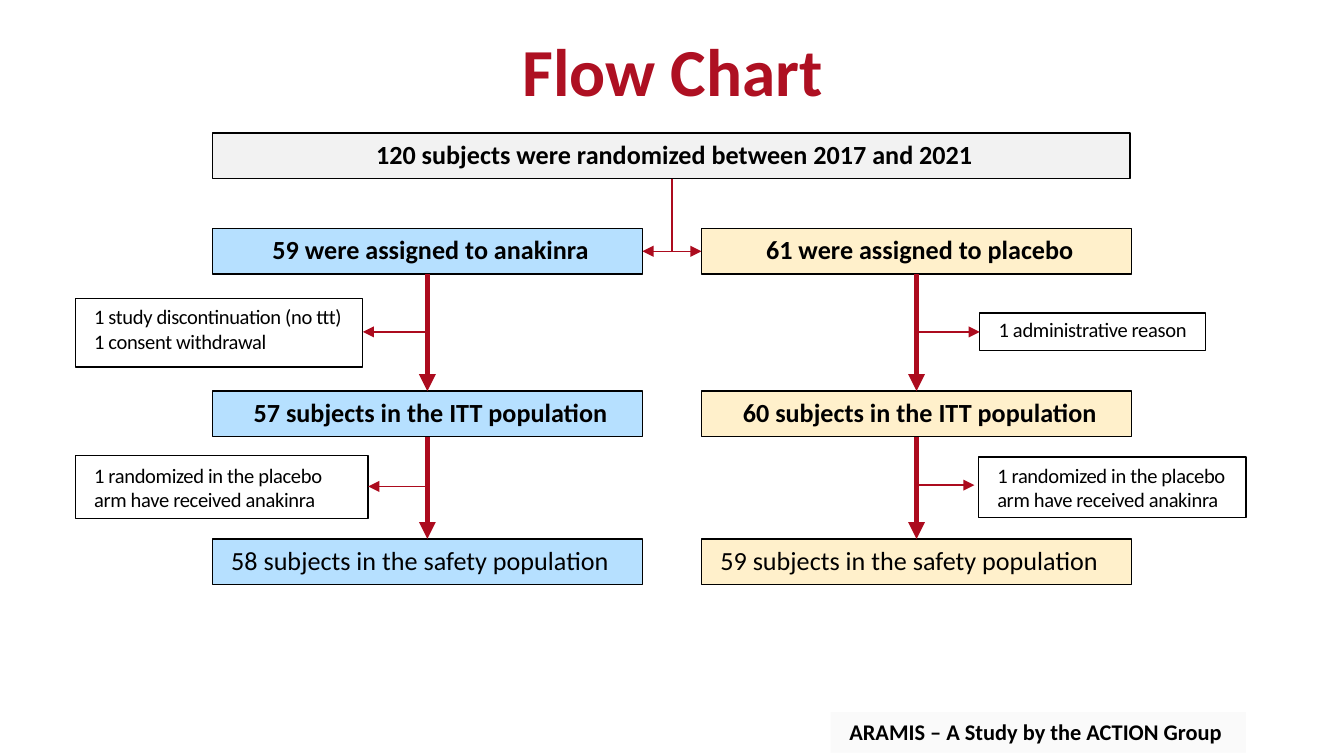
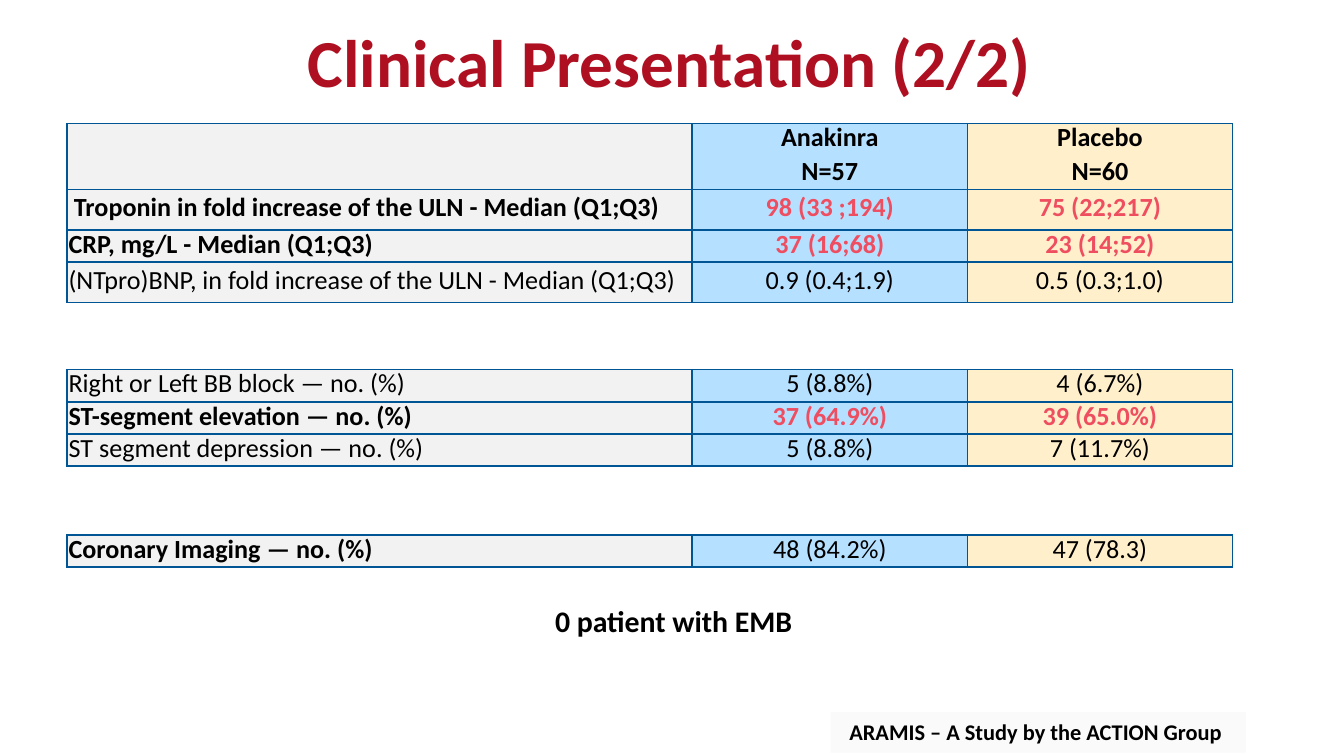
from dataclasses import dataclass
from typing import NamedTuple

from lxml import etree
from pptx import Presentation
from pptx.dml.color import RGBColor
from pptx.enum.shapes import MSO_CONNECTOR, MSO_SHAPE
from pptx.enum.text import MSO_ANCHOR, MSO_AUTO_SIZE, PP_ALIGN
from pptx.oxml.ns import qn
from pptx.util import Inches, Pt


@dataclass(frozen=True)
class Theme:
    font: str = "Calibri"
    title_color: str = "AE1022"
    arrow: str = "AC0B1E"
    highlight: str = "EF4D60"
    text: str = "000000"
    white: str = "FFFFFF"
    neutral: str = "F2F2F2"
    anakinra: str = "B6E0FF"
    placebo: str = "FFF0CB"
    band: str = "FAFAFA"
    grid: str = "005694"
    title_size: int = 36
    remark_size: int = 16
    body_size: int = 14
    footer_size: int = 12
    note_size: int = 11
    thin: float = 0.75
    thick: float = 3
    table_line: float = 15.8


THEME = Theme()
ARM_WIDTH = 3.2
BOX_HEIGHT = 0.34
STAGE_TOPS = (1.7, 2.91, 4.01)
COLUMN_WIDTHS = (4.65, 2.05, 1.97)


class Arm(NamedTuple):
    left: float
    color: str
    stages: tuple

    @property
    def center(self):
        return self.left + ARM_WIDTH / 2


class Exclusion(NamedTuple):
    area: tuple
    text: str
    arrow_end: float
    arrow_y: float
    bottom_margin: float = 0


class Measure(NamedTuple):
    label: str
    anakinra: str
    placebo: str
    height: float = 0.24
    bold: bool = False
    highlight: bool = False
    indent: float = 0.01


ARMS = (
    Arm(1.58, THEME.anakinra, (
        "59 were assigned to anakinra",
        "57 subjects in the ITT population",
        "58 subjects in the safety population")),
    Arm(5.22, THEME.placebo, (
        "61 were assigned to placebo",
        "60 subjects in the ITT population",
        "59 subjects in the safety population")),
)
CROSSOVER = "1 randomized in the placebo arm have received anakinra"
EXCLUSIONS = (
    (Exclusion((0.56, 2.22, 2.14, 0.51),
               "1 study discontinuation (no ttt) 1 consent withdrawal", 2.7, 2.47, 0.06),
     Exclusion((0.56, 3.39, 2.18, 0.47), CROSSOVER, 2.74, 3.62)),
    (Exclusion((7.29, 2.33, 1.68, 0.28), "1 administrative reason", 7.29, 2.47, 0.04),
     Exclusion((7.28, 3.4, 1.99, 0.45), CROSSOVER, 7.25, 3.61)),
)
BIOMARKERS = (
    Measure("", "Anakinra\nN=57", "Placebo\nN=60", 0.49, bold=True),
    Measure("Troponin in fold increase of the ULN - Median (Q1;Q3)",
            "98 (33 ;194)", "75 (22;217)", 0.3, True, True, 0.05),
    Measure("CRP, mg/L - Median (Q1;Q3)", "37 (16;68)", "23 (14;52)",
            bold=True, highlight=True),
    Measure("(NTpro)BNP, in fold increase of the ULN - Median (Q1;Q3)",
            "0.9 (0.4;1.9)", "0.5 (0.3;1.0)", 0.3),
)
ECG_FINDINGS = (
    Measure("Right or Left BB block — no. (%)", "5 (8.8%)", "4 (6.7%)"),
    Measure("ST-segment elevation — no. (%)", "37 (64.9%)", "39 (65.0%)",
            bold=True, highlight=True),
    Measure("ST segment depression — no. (%)", "5 (8.8%)", "7 (11.7%)"),
)
IMAGING = (
    Measure("Coronary Imaging — no. (%)", "48 (84.2%)", "47 (78.3)", bold=True),
)


def rgb(color):
    return RGBColor.from_string(color)


def place(area):
    return [Inches(length) for length in area]


def format_text(frame, size, color=THEME.text, bold=False, align=PP_ALIGN.LEFT, tracking=0):
    for paragraph in frame.paragraphs:
        paragraph.alignment = align
        for run in paragraph.runs:
            run.font.name = THEME.font
            run.font.size = Pt(size)
            run.font.bold = bold
            run.font.color.rgb = rgb(color)
            if tracking:
                run.font._element.set("spc", str(round(tracking * 100)))


def set_frame(frame, left=0, right=0, top=0, bottom=0, anchor=MSO_ANCHOR.MIDDLE):
    frame.word_wrap = True
    frame.auto_size = MSO_AUTO_SIZE.NONE
    frame.vertical_anchor = anchor
    frame.margin_left, frame.margin_right = Inches(left), Inches(right)
    frame.margin_top, frame.margin_bottom = Inches(top), Inches(bottom)


def add_box(slide, area, fill, outlined=True):
    box = slide.shapes.add_shape(MSO_SHAPE.RECTANGLE, *place(area))
    box.shadow.inherit = False
    box.fill.solid()
    box.fill.fore_color.rgb = rgb(fill)
    if outlined:
        box.line.color.rgb = rgb(THEME.text)
        box.line.width = Pt(THEME.thin)
    else:
        box.line.fill.background()
    return box


def add_stage(slide, area, text, fill, bold=True, align=PP_ALIGN.CENTER):
    frame = add_box(slide, area, fill).text_frame
    set_frame(frame, left=0.14 if align == PP_ALIGN.LEFT else 0.05, bottom=0.03)
    frame.text = text
    format_text(frame, THEME.body_size, bold=bold, align=align)


def add_note(slide, exclusion):
    frame = add_box(slide, exclusion.area, THEME.white).text_frame
    set_frame(frame, left=0.14, right=0.12, bottom=exclusion.bottom_margin)
    frame.text = exclusion.text
    format_text(frame, THEME.note_size, tracking=-0.2)


def add_label(slide, area, text, size):
    frame = slide.shapes.add_textbox(*place(area)).text_frame
    set_frame(frame, left=0.01)
    frame.text = text
    format_text(frame, size, bold=True)


def add_arrow(slide, start, end, width=THEME.thin, heads=("tailEnd",)):
    """Draw a line; "headEnd" puts an arrowhead at start, "tailEnd" at end."""
    arrow = slide.shapes.add_connector(MSO_CONNECTOR.STRAIGHT, *place(start + end))
    arrow.line.color.rgb = rgb(THEME.arrow)
    arrow.line.width = Pt(width)
    properties = arrow._element.spPr
    outline = properties.find(qn("a:ln"))
    for head in heads:
        etree.SubElement(outline, qn(f"a:{head}"), type="triangle", w="med", len="med")
    etree.SubElement(properties, qn("a:effectLst"))


def add_titled_slide(deck, title, area):
    """Add a slide with the title style and footer band shared by the deck."""
    slide = deck.slides.add_slide(deck.slide_layouts[5])
    heading = slide.shapes.title
    heading.left, heading.top, heading.width, heading.height = place(area)
    set_frame(heading.text_frame, top=0.01, anchor=MSO_ANCHOR.TOP)
    heading.text_frame.text = title
    format_text(heading.text_frame, THEME.title_size, THEME.title_color, True, PP_ALIGN.CENTER)
    add_box(slide, (6.18, 5.3, 3.09, 0.3), THEME.band, outlined=False)
    add_label(slide, (6.31, 5.33, 2.81, 0.23), "ARAMIS – A Study by the ACTION Group",
              THEME.footer_size)
    return slide


def set_borders(cell):
    properties = cell._tc.get_or_add_tcPr()
    for position, side in enumerate(("lnL", "lnR", "lnT", "lnB")):
        border = etree.Element(qn(f"a:{side}"), w=str(Pt(1)))
        fill = etree.SubElement(border, qn("a:solidFill"))
        etree.SubElement(fill, qn("a:srgbClr"), val=THEME.grid)
        properties.insert(position, border)


def fill_cell(cell, text, fill, color, bold, align, indent=0):
    cell.fill.solid()
    cell.fill.fore_color.rgb = rgb(fill)
    cell.margin_left, cell.margin_bottom = Inches(indent), Inches(0.01)
    cell.margin_right = cell.margin_top = 0
    cell.vertical_anchor = MSO_ANCHOR.MIDDLE
    cell.text_frame.text = text
    format_text(cell.text_frame, THEME.body_size, color, bold, align)
    for number, paragraph in enumerate(cell.text_frame.paragraphs):
        paragraph.line_spacing = Pt(THEME.table_line)
        if number:
            paragraph.space_before = Pt(2.4)
    set_borders(cell)


def add_measures(slide, top, measures, bold_values=False):
    area = (0.5, top, sum(COLUMN_WIDTHS), sum(m.height for m in measures))
    table = slide.shapes.add_table(len(measures), len(COLUMN_WIDTHS), *place(area)).table
    table.first_row = table.horz_banding = False
    for column, width in zip(table.columns, COLUMN_WIDTHS):
        column.width = Inches(width)
    for row, measure in zip(table.rows, measures):
        row.height = Inches(measure.height)
        label, *values = row.cells
        fill_cell(label, measure.label, THEME.neutral, THEME.text, measure.bold,
                  PP_ALIGN.LEFT, measure.indent)
        color = THEME.highlight if measure.highlight else THEME.text
        bold = measure.highlight or (bold_values and measure.bold)
        for cell, text, fill in zip(values, (measure.anakinra, measure.placebo),
                                    (THEME.anakinra, THEME.placebo)):
            fill_cell(cell, text, fill, color, bold, PP_ALIGN.CENTER)


def add_arm(slide, arm, exclusions):
    for number, (top, text) in enumerate(zip(STAGE_TOPS, arm.stages)):
        safety = number == len(STAGE_TOPS) - 1
        add_stage(slide, (arm.left, top, ARM_WIDTH, BOX_HEIGHT), text, arm.color,
                  bold=not safety, align=PP_ALIGN.LEFT if safety else PP_ALIGN.CENTER)
    for top, next_top in zip(STAGE_TOPS, STAGE_TOPS[1:]):
        add_arrow(slide, (arm.center, top + BOX_HEIGHT), (arm.center, next_top), THEME.thick)
    for exclusion in exclusions:
        add_note(slide, exclusion)
        add_arrow(slide, (arm.center, exclusion.arrow_y),
                  (exclusion.arrow_end, exclusion.arrow_y))


def build_flow_chart(deck):
    slide = add_titled_slide(deck, "Flow Chart", (1.55, 0.21, 6.91, 0.63))
    add_stage(slide, (1.58, 0.99, 6.83, BOX_HEIGHT),
              "120 subjects were randomized between 2017 and 2021", THEME.neutral)
    split_y = STAGE_TOPS[0] + BOX_HEIGHT / 2
    add_arrow(slide, (5, 0.99 + BOX_HEIGHT), (5, split_y), heads=())
    add_arrow(slide, (ARMS[0].left + ARM_WIDTH, split_y), (ARMS[1].left, split_y),
              heads=("headEnd", "tailEnd"))
    for arm, exclusions in zip(ARMS, EXCLUSIONS):
        add_arm(slide, arm, exclusions)


def build_clinical_presentation(deck):
    slide = add_titled_slide(deck, "Clinical Presentation (2/2)", (2.26, 0.14, 5.44, 0.63))
    add_measures(slide, 0.92, BIOMARKERS, bold_values=True)
    add_measures(slide, 2.75, ECG_FINDINGS)
    add_measures(slide, 3.98, IMAGING)
    add_label(slide, (4.12, 4.47, 1.8, 0.29), "0 patient with EMB", THEME.remark_size)


def main():
    deck = Presentation()
    deck.slide_width = Inches(10)
    deck.slide_height = deck.slide_width * 9 // 16
    build_flow_chart(deck)
    build_clinical_presentation(deck)
    deck.save("out.pptx")


if __name__ == "__main__":
    main()
